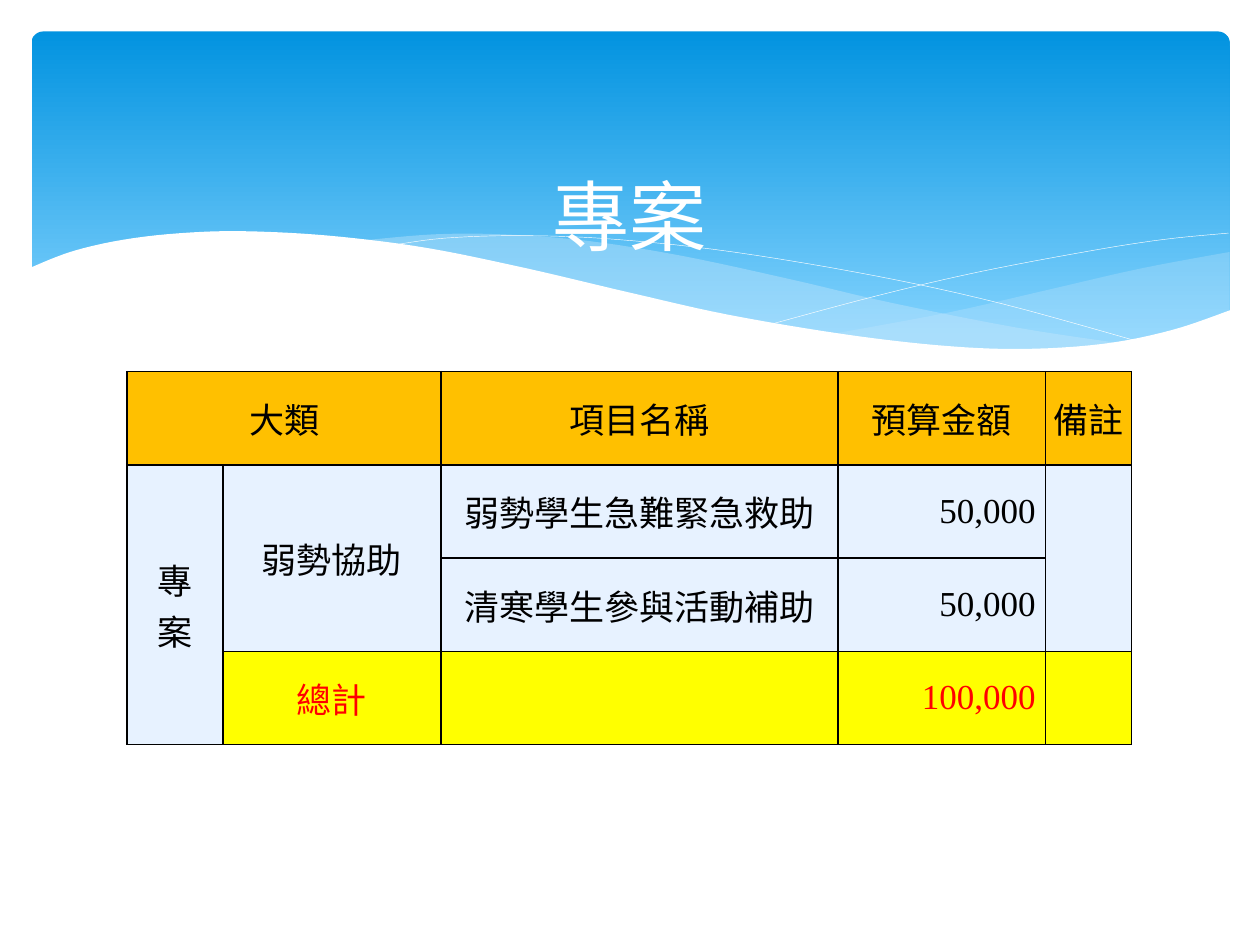
from lxml import etree
from pptx import Presentation
from pptx import util as u
from pptx.dml.color import RGBColor
from pptx.enum import shapes, text
from pptx.oxml.ns import qn

ALIGN = {"l": text.PP_ALIGN.LEFT, "c": text.PP_ALIGN.CENTER,
         "r": text.PP_ALIGN.RIGHT}
WHITE, MIST = "FFFFFF", "C6E7FC"
GOLD, PALE, YELLOW = "FFC000", "E7F2FF", "FFFF00"

# Key points of each curve, in inches
RIGHT_TOP = [(9.76, 2), (9.06, 2.13), (8.32, 2.3), (7.53, 2.48), (6.61, 2.65)]
RIGHT_LOW = [(6.61, 2.65), (7.19, 2.72), (7.81, 2.77), (8.35, 2.77),
             (8.89, 2.72), (9.35, 2.62), (9.76, 2.47)]
MID_TOP = [(8.93, 2.73), (8.07, 2.6), (7.06, 2.4), (6.29, 2.22), (5.41, 2.03),
           (4.65, 1.91), (3.99, 1.86), (3.44, 1.86), (2.86, 1.91)]
MID_LOW = [(2.86, 1.91), (3.62, 2.03), (4.49, 2.22), (5.3, 2.4), (6.18, 2.58),
           (6.95, 2.7), (7.61, 2.77), (8.28, 2.78), (8.93, 2.73)]
LONG_LINE = [(3.09, 1.95), (3.53, 1.89), (4.16, 1.87), (4.89, 1.9),
             (5.82, 2), (6.95, 2.19), (7.95, 2.41), (9.07, 2.72)]
SHORT_LINE = [(6.13, 2.57), (6.95, 2.35), (7.76, 2.16), (8.66, 1.99),
              (9.24, 1.9), (9.75, 1.85)]
FRONT = [(9.77, 2.46), (9.3, 2.62), (8.75, 2.73), (8.09, 2.77), (7.44, 2.74),
         (6.68, 2.65), (5.79, 2.5), (5.03, 2.33), (4.18, 2.13), (3.4, 1.97),
         (2.71, 1.88), (2.11, 1.84), (1.61, 1.84), (1.06, 1.89),
         (0.59, 1.99), (0.23, 2.13)]


def color(code):
    return RGBColor.from_string(code)


def smooth(keys, steps=6):
    """Sample a Catmull-Rom curve through the key points."""
    ends = [keys[0], *keys, keys[-1]]
    out = []
    for a, b, c, d in zip(ends, ends[1:], ends[2:], ends[3:]):
        for i in range(steps):
            t = i / steps
            out.append(tuple(
                (2 * q + (r - p) * t + (2 * p - 5 * q + 4 * r - s) * t ** 2
                 + (3 * q - p - 3 * r + s) * t ** 3) / 2
                for p, q, r, s in zip(a, b, c, d)))
    return out + [keys[-1]]


def outline(slide, points, close):
    spots = [(u.Inches(x), u.Inches(y)) for x, y in points]
    pen = slide.shapes.build_freeform(*spots[0])
    pen.add_line_segments(spots[1:], close=close)
    shape = pen.convert_to_shape()
    shape.shadow.inherit = False
    return shape


def add_wave(slide, points, fill, alpha=None):
    shape = outline(slide, points, True)
    shape.fill.solid()
    shape.fill.fore_color.rgb = color(fill)
    shape.line.fill.background()
    if alpha:
        tone = shape.fill._xPr.find(".//" + qn("a:srgbClr"))
        etree.SubElement(tone, qn("a:alpha"), val=str(alpha * 1000))


def add_curve(slide, keys):
    shape = outline(slide, smooth(keys), False)
    shape.fill.background()
    shape.line.color.rgb = color(WHITE)
    shape.line.width = u.Pt(0.25)


def add_sky(slide):
    sky = slide.shapes.add_shape(
        shapes.MSO_SHAPE.ROUNDED_RECTANGLE, u.Inches(0.25), u.Inches(0.25),
        u.Inches(9.51), u.Inches(2.7))
    sky.adjustments[0] = 0.034
    sky.shadow.inherit = False
    sky.line.fill.background()
    sky.fill.gradient()
    sky.fill.gradient_angle = 270
    stops = [(0, "0293E0"), (0.9, "83D3FE")]
    for stop, (spot, code) in zip(sky.fill.gradient_stops, stops):
        stop.position = spot
        stop.color.rgb = color(code)


def write(frame, words, size=20, font="Times New Roman", ink="000000",
          align="c"):
    frame.text = words
    para = frame.paragraphs[0]
    para.alignment = ALIGN[align]
    for run in para.runs:
        run.font.size = u.Pt(size)
        run.font.name = font
        run.font.color.rgb = color(ink)


def add_title(slide, words):
    box = slide.shapes.add_textbox(
        u.Inches(0.5), u.Inches(1.02), u.Inches(9), u.Inches(1.37))
    frame = box.text_frame
    frame.word_wrap = True
    frame.vertical_anchor = text.MSO_ANCHOR.MIDDLE
    write(frame, words, size=44, font="Calibri", ink=WHITE)


def add_edges(cell):
    props = cell._tc.get_or_add_tcPr()
    for side in ("lnL", "lnR", "lnT", "lnB"):
        edge = etree.SubElement(props, qn("a:" + side), w=str(u.Pt(1)))
        fill = etree.SubElement(edge, qn("a:solidFill"))
        etree.SubElement(fill, qn("a:srgbClr"), val="000000")


def add_budget(slide):
    rows = [["大類", "", "項目名稱", "預算金額", "備註"],
            ["專\v案", "弱勢協助", "弱勢學生急難緊急救助", "50,000 ", ""],
            ["", "", "清寒學生參與活動補助", "50,000 ", ""],
            ["", "總計", "", "100,000 ", ""]]
    widths = [0.76, 1.73, 3.15, 1.65, 0.68]
    high, last = 0.74, len(rows) - 1
    table = slide.shapes.add_table(
        len(rows), len(widths), u.Inches(1.01), u.Inches(2.95),
        u.Inches(sum(widths)), u.Inches(high * len(rows))).table
    for col, wide in zip(table.columns, widths):
        col.width = u.Inches(wide)
    for r, row in enumerate(rows):
        table.rows[r].height = u.Inches(high)
        for c, words in enumerate(row):
            cell = table.cell(r, c)
            total = r == last and c > 0
            add_edges(cell)
            cell.fill.solid()
            cell.fill.fore_color.rgb = color(
                GOLD if r == 0 else YELLOW if total else PALE)
            cell.vertical_anchor = text.MSO_ANCHOR.MIDDLE
            cell.margin_left = cell.margin_right = u.Inches(0.01)
            cell.margin_top = cell.margin_bottom = u.Inches(0.01)
            write(cell.text_frame, words, ink="FF0000" if total else "000000",
                  align="r" if r and c == 3 else "c")
    for start, end in [((0, 0), (0, 1)), ((1, 0), (3, 0)),
                       ((1, 1), (2, 1)), ((1, 4), (2, 4))]:
        table.cell(*start).merge(table.cell(*end))


def main():
    deck = Presentation()
    deck.slide_width, deck.slide_height = u.Inches(10), u.Inches(7.5)
    slide = deck.slides.add_slide(deck.slide_layouts[6])
    add_sky(slide)
    add_wave(slide, smooth(RIGHT_TOP) + smooth(RIGHT_LOW), MIST, 29)
    add_wave(slide, smooth(MID_TOP) + smooth(MID_LOW), MIST, 40)
    add_curve(slide, LONG_LINE)
    add_curve(slide, SHORT_LINE)
    add_wave(slide, smooth(FRONT) + [(0.23, 3.29), (9.77, 3.29)], WHITE)
    add_title(slide, "專案")
    add_budget(slide)
    deck.save("out.pptx")


if __name__ == "__main__":
    main()
